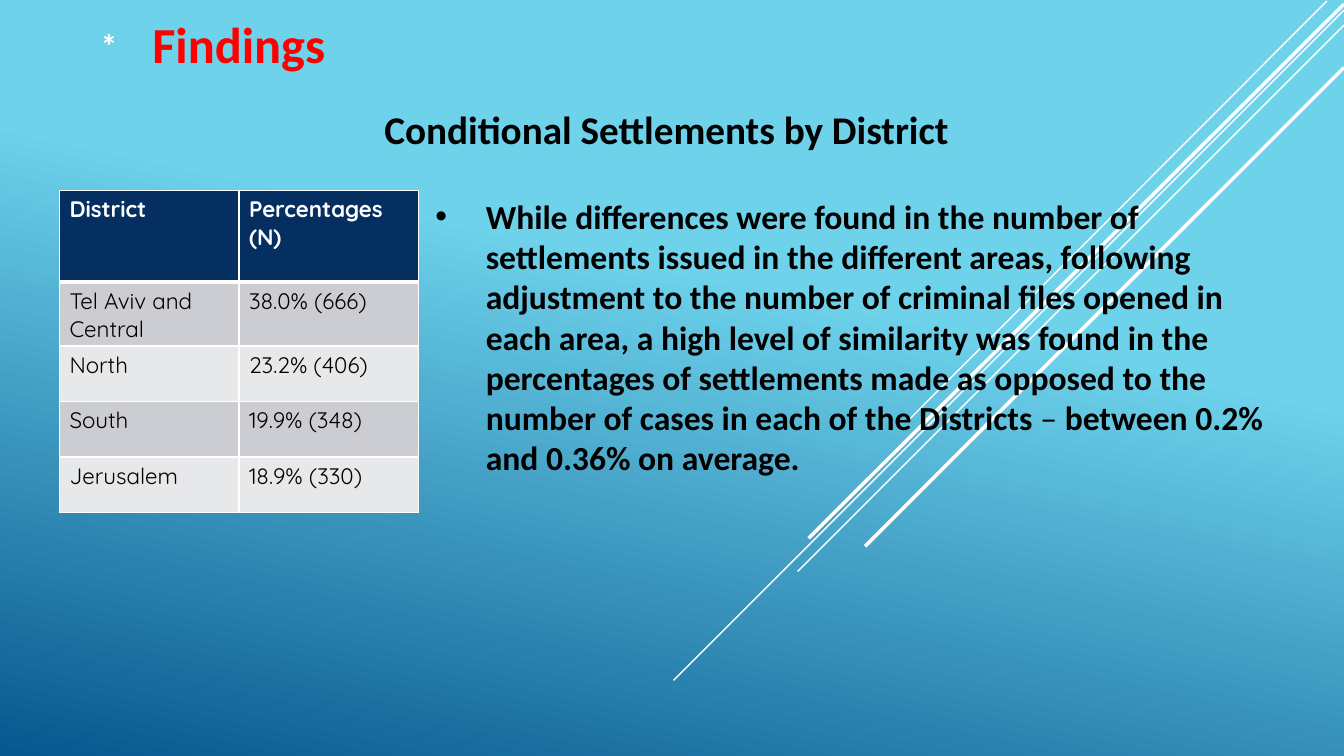
from lxml.etree import SubElement
from pptx import Presentation
from pptx.dml.color import RGBColor
from pptx.enum.shapes import MSO_CONNECTOR as Connector
from pptx.enum.text import MSO_AUTO_SIZE as AutoSize, PP_ALIGN as Align
from pptx.oxml import parse_xml
from pptx.oxml.ns import nsdecls, qn
from pptx.util import Inches, Pt

# Content
TITLE = "Findings"
MARKER = "*"
SUBTITLE = "Conditional Settlements by District"
FINDING = [  # text, bold
    ("While differences were found in the number of settlements issued in the "
     "different areas, following adjustment to the number of criminal files "
     "opened in each area, a high level of similarity was found in the "
     "percentages of settlements made as opposed to the number of cases in "
     "each of the Districts ", True),
    ("–", False),
    (" between 0.2% and 0.36% on average.", True),
]
DISTRICTS = [
    ("District", "Percentages\n(N)"),
    ("Tel Aviv and Central", "38.0% (666)"),
    ("North", "23.2% (406)"),
    ("South", "19.9% (348)"),
    ("Jerusalem", "18.9% (330)"),
]
RAYS = [  # start, end, width in points
    ((13.16, 0.01), (9, 4.18), 1),
    ((13.33, 0.1), (6.68, 6.75), 1),
    ((13.33, 0.25), (7.91, 5.67), 1),
    ((13.33, 0.04), (8.02, 5.34), 2.5),
    ((13.33, 0.67), (8.58, 5.42), 2.5),
]

THEME = {
    "sky": "6ED2EB", "deep": "06588E", "white": "FFFFFF", "black": "000000",
    "red": "FF0000", "header": "052F61", "bands": ("CCCDD2", "E7E8EA"),
    "text_font": "Calibri", "table_font": "Quicksand",
    "title": 36, "subtitle": 28, "body": 24, "table": 16,
}


def rgb(key):
    return RGBColor.from_string(THEME.get(key, key))


def style(run, size, color, bold=True, font="text_font"):
    run.font.name = THEME[font]
    run.font.size = Pt(THEME[size])
    run.font.color.rgb = rgb(color)
    run.font.bold = bold


def add_text(slide, box, runs, size, color, align=Align.LEFT, grow=True):
    frame = slide.shapes.add_textbox(*map(Inches, box)).text_frame
    frame.word_wrap = True
    frame.auto_size = AutoSize.SHAPE_TO_FIT_TEXT if grow else AutoSize.NONE
    paragraph = frame.paragraphs[0]
    paragraph.alignment = align
    for text, bold in runs:
        run = paragraph.add_run()
        run.text = text
        style(run, size, color, bold)
    return paragraph


def add_bullet(paragraph, indent):
    properties = paragraph._p.get_or_add_pPr()
    properties.set("marL", str(Inches(indent)))
    properties.set("indent", str(-Inches(indent)))
    SubElement(properties, qn("a:buFont")).set("typeface", "Arial")
    SubElement(properties, qn("a:buChar")).set("char", "•")


def add_borders(cell, top, bottom):
    widths = {"L": 1, "R": 1, "T": top, "B": bottom}
    for place, (side, width) in enumerate(widths.items()):
        cell._tc.get_or_add_tcPr().insert(place, parse_xml(
            f'<a:ln{side} {nsdecls("a")} w="{Pt(width)}"><a:solidFill>'
            f'<a:srgbClr val="{THEME["white"]}"/></a:solidFill></a:ln{side}>'))


def add_rays(slide):
    for start, end, width in RAYS:
        ray = slide.shapes.add_connector(
            Connector.STRAIGHT, *map(Inches, start + end))
        ray.line.color.rgb = rgb("white")
        ray.line.width = Pt(width)
        SubElement(ray._element.spPr, qn("a:effectLst"))


def add_districts(slide):
    heights = [0.91] + [0.55] * (len(DISTRICTS) - 1)
    table = slide.shapes.add_table(
        len(DISTRICTS), 2, Inches(0.59), Inches(1.89),
        Inches(3.56), Inches(sum(heights))).table
    for r, values in enumerate(DISTRICTS):
        table.rows[r].height = Inches(heights[r])
        is_header = r == 0
        fill = "header" if is_header else THEME["bands"][(r - 1) % 2]
        for c, value in enumerate(values):
            cell = table.cell(r, c)
            cell.text_frame.text = value
            for paragraph in cell.text_frame.paragraphs:
                style(paragraph.runs[0], "table",
                      "white" if is_header else "black", is_header, "table_font")
            cell.fill.solid()
            cell.fill.fore_color.rgb = rgb(fill)
            add_borders(cell, 3 if r == 1 else 1, 3 if is_header else 1)


def main():
    deck = Presentation()
    deck.slide_width, deck.slide_height = Inches(13.33), Inches(7.5)
    slide = deck.slides.add_slide(deck.slide_layouts[6])

    # Background and diagonal rays
    sky = slide.background.fill
    sky.gradient()
    sky.gradient_angle = 258
    for stop, (position, color) in zip(
            sky.gradient_stops, [(0.39, "sky"), (1, "deep")]):
        stop.position = position
        stop.color.rgb = rgb(color)
    add_rays(slide)

    # Headings
    title = add_text(slide, (0.75, 0.08, 3.24, 0.73), [(TITLE, True)],
                     "title", "red", Align.CENTER, grow=False)
    title.space_after = Pt(6)
    marker = add_text(slide, (0.9, 0, 11.41, 0.64), [(MARKER, True)],
                      "body", "white")
    marker.line_spacing = 1.5
    add_text(slide, (3.09, 1, 7.04, 0.88), [(SUBTITLE, True)],
             "subtitle", "black", Align.CENTER)

    # Finding and district table
    finding = add_text(slide, (4.22, 1.89, 8.53, 2.93), FINDING, "body", "black")
    add_bullet(finding, 0.5)
    add_districts(slide)

    deck.save("out.pptx")


if __name__ == "__main__":
    main()
